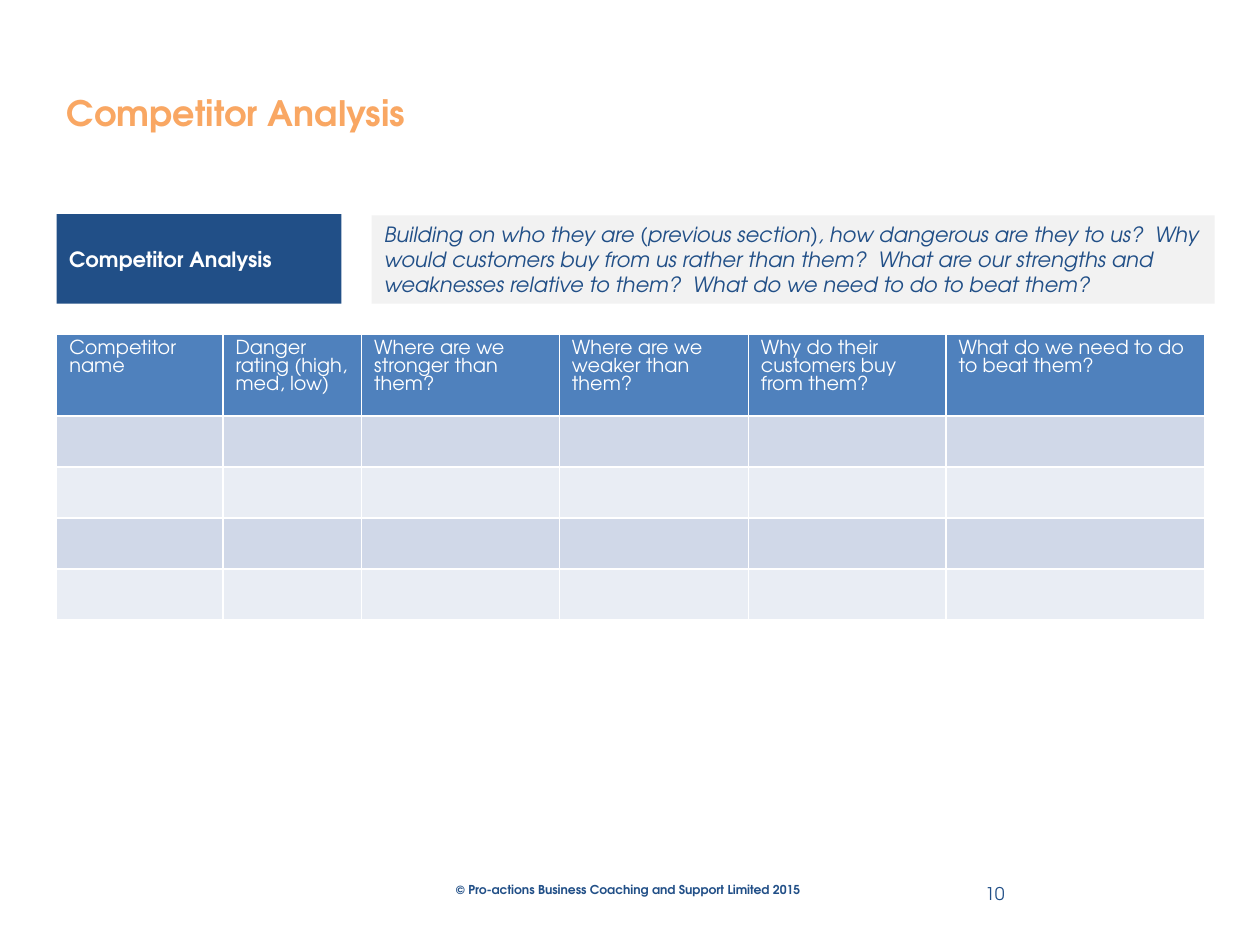
import pptx
import pptx.dml.color
import pptx.enum.shapes
import pptx.enum.text
import pptx.oxml
import pptx.oxml.ns
import pptx.util

Inches = pptx.util.Inches
Anchor = pptx.enum.text.MSO_ANCHOR
Align = pptx.enum.text.PP_ALIGN

THEME = {
    "font": "TeX Gyre Adventor",
    "navy": "214F87", "orange": "F9A763", "white": "FFFFFF", "grey": "F2F2F2",
    "header": "4F81BD", "bands": ("D0D8E8", "E9EDF4"),
    "title": 20, "body": 12, "table": 11, "number": 10, "footer": 7,
}

TITLE = "Competitor Analysis"
PROMPT = (
    "Building on who they are (previous section), how dangerous are they to us?  "
    "Why would customers buy from us rather than them?  What are our strengths and "
    "weaknesses relative to them?  What do we need to do to beat them?"
)
COLUMNS = [
    ("Competitor name", 1.32),
    ("Danger rating (high, med, low)", 1.1),
    ("Where are we stronger than them?", 1.57),
    ("Where are we weaker than them?", 1.5),
    ("Why do their customers buy from them?", 1.57),
    ("What do we need to do to beat them?", 2.05),
]
EMPTY_ROWS = 4
TABLE_HEIGHT, HEADER_HEIGHT = 2.27, 0.65
FOOTER = "© Pro-actions Business Coaching and Support Limited 2015"
PAGE_NUMBER = "10"


def color(name):
    return pptx.dml.color.RGBColor.from_string(THEME.get(name, name))


def write(frame, text, size, ink, bold=False, italic=False,
          align=Align.LEFT, anchor=Anchor.TOP, wrap=True):
    frame.word_wrap = wrap
    frame.vertical_anchor = anchor
    para = frame.paragraphs[0]
    para.text = text
    para.alignment = align
    font = para.font
    font.name, font.size = THEME["font"], pptx.util.Pt(THEME[size])
    font.bold, font.italic = bold, italic
    font.color.rgb = color(ink)


def add_panel(slide, place, fill):
    panel = slide.shapes.add_shape(
        pptx.enum.shapes.MSO_SHAPE.RECTANGLE, *map(Inches, place))
    panel.shadow.inherit = False
    panel.fill.solid()
    panel.fill.fore_color.rgb = color(fill)
    panel.line.fill.background()
    return panel.text_frame


def add_text(slide, place):
    return slide.shapes.add_textbox(*map(Inches, place)).text_frame


def style_cell(cell, fill):
    cell.fill.solid()
    cell.fill.fore_color.rgb = color(fill)
    properties = cell._tc.get_or_add_tcPr()
    for index, side in enumerate(("lnL", "lnR", "lnT", "lnB")):
        properties.insert(index, pptx.oxml.parse_xml(
            f'<a:{side} {pptx.oxml.ns.nsdecls("a")} w="12700"><a:solidFill>'
            f'<a:srgbClr val="{THEME["white"]}"/></a:solidFill></a:{side}>'))


def add_competitor_table(slide):
    width = sum(column[1] for column in COLUMNS)
    row_height = (TABLE_HEIGHT - HEADER_HEIGHT) / EMPTY_ROWS
    table = slide.shapes.add_table(
        EMPTY_ROWS + 1, len(COLUMNS),
        *map(Inches, (0.45, 2.65, width, TABLE_HEIGHT))).table
    for row_index, row in enumerate(table.rows):
        row.height = Inches(row_height if row_index else HEADER_HEIGHT)
        fill = THEME["bands"][(row_index - 1) % 2] if row_index else "header"
        for cell in row.cells:
            style_cell(cell, fill)
    for index, (heading, column_width) in enumerate(COLUMNS):
        table.columns[index].width = Inches(column_width)
        write(table.cell(0, index).text_frame, heading, "table", "white")


def main():
    deck = pptx.Presentation()
    deck.slide_width, deck.slide_height = Inches(10), Inches(7.5)
    slide = deck.slides.add_slide(deck.slide_layouts[5])

    title = slide.shapes.title
    title.left, title.top, title.width, title.height = map(
        Inches, (0.43, 0.68, 6.14, 0.44))
    write(title.text_frame, TITLE, "title", "orange", bold=True)
    title.text_frame.auto_size = pptx.enum.text.MSO_AUTO_SIZE.NONE

    write(add_panel(slide, (0.45, 1.7, 2.26, 0.71), "navy"),
          TITLE, "body", "white", bold=True, anchor=Anchor.MIDDLE)
    write(add_panel(slide, (2.95, 1.71, 6.69, 0.7), "grey"),
          PROMPT, "body", "navy", italic=True)
    add_competitor_table(slide)
    write(add_text(slide, (3.52, 6.95, 2.99, 0.22)),
          FOOTER, "footer", "navy", bold=True, wrap=False)
    write(add_text(slide, (7.54, 6.89, 0.53, 0.4)),
          PAGE_NUMBER, "number", "navy", align=Align.RIGHT, anchor=Anchor.MIDDLE)
    deck.save("out.pptx")


if __name__ == "__main__":
    main()
